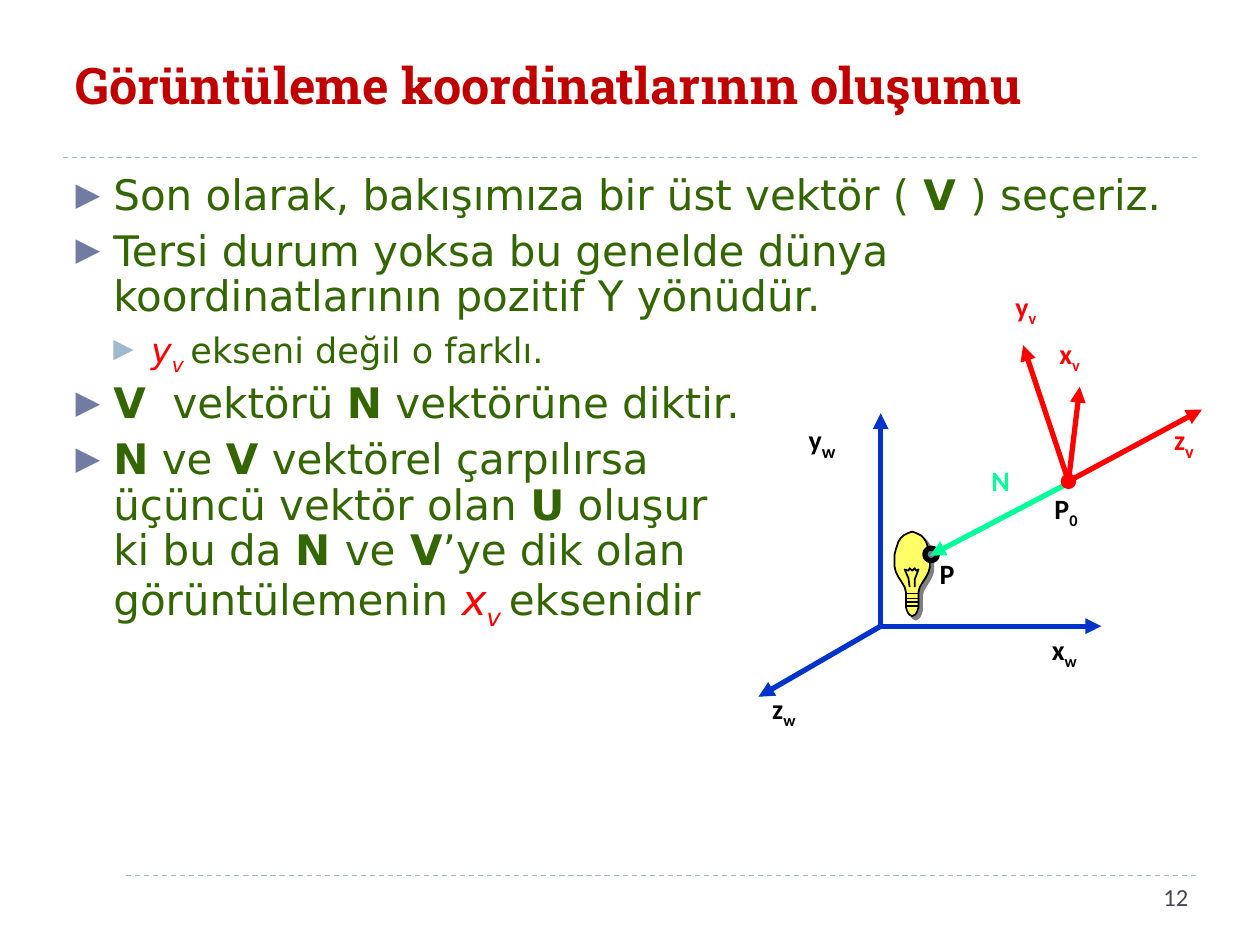
import copy

import pptx
import pptx.dml.color
import pptx.enum.dml
import pptx.enum.shapes
import pptx.enum.text
import pptx.oxml
import pptx.oxml.ns
import pptx.util
from pptx.util import Inches

RGBColor = pptx.dml.color.RGBColor
TITLE_RED = RGBColor(0xC0, 0x00, 0x00)
BODY_GREEN = RGBColor(0x33, 0x66, 0x00)
VIEW_RED = RGBColor(0xFF, 0x00, 0x00)
WORLD_BLUE = RGBColor(0x00, 0x33, 0xCC)
NORMAL_GREEN = RGBColor(0x00, 0xFF, 0x99)
BULB_YELLOW = RGBColor(0xFF, 0xFF, 0x66)
POINT_FILL = RGBColor(0x72, 0x7C, 0xA3)
RULE_BLUE = RGBColor(0x9F, 0xB8, 0xCD)
NUMBER_GRAY = RGBColor(0x46, 0x46, 0x53)
BLACK = RGBColor(0x00, 0x00, 0x00)

TITLE = "Görüntüleme koordinatlarının oluşumu"
TITLE_FORMAT = {"name": "Roboto Slab", "size": 28.8, "bold": True, "color": TITLE_RED}
NUMBER_FORMAT = {"name": "Calibri", "size": 14, "color": NUMBER_GRAY}
LABEL_FORMAT = {"name": "Calibri", "size": 16, "bold": True}

PLAIN = {"color": BODY_GREEN}
BOLD = {"color": BODY_GREEN, "bold": True}
AXIS = {"color": VIEW_RED, "italic": True}
SUB = {**AXIS, "subscript": True}

# (level, runs); a newline inside a run is a line break
BULLETS = [
    (0, [("Son olarak, bakışımıza bir üst vektör ( ", PLAIN), ("V ", BOLD), (") seçeriz.", PLAIN)]),
    (0, [("Tersi durum yoksa bu genelde dünya koordinatlarının pozitif Y yönüdür.", PLAIN)]),
    (1, [("y", AXIS), ("v ", SUB), ("ekseni değil o farklı.", PLAIN)]),
    (0, [("V", BOLD), ("  vektörü ", PLAIN), ("N", BOLD), (" vektörüne diktir.", PLAIN)]),
    (0, [("N", BOLD), (" ve ", PLAIN), ("V", BOLD),
         (" vektörel çarpılırsa \nüçüncü vektör olan ", PLAIN), ("U", BOLD),
         (" oluşur \nki bu da ", PLAIN), ("N ", BOLD), ("ve", PLAIN), (" V", BOLD),
         ("’ye dik olan \ngörüntülemenin ", PLAIN), ("x", AXIS), ("v ", SUB),
         ("eksenidir", PLAIN)]),
]
# size, space before, bullet colour of each level
LEVELS = [(24, 6, POINT_FILL), (20, 5, RULE_BLUE)]

RULES = [((0.5, 1.25), (9.5, 1.25)), ((1, 6.95), (9.5, 6.95))]

WORLD_ORIGIN = (6.99, 4.97)
VIEW_ORIGIN = (8.48, 3.82)
WORLD_AXES = [(6.99, 3.28), (8.74, 4.97), (6.02, 5.53)]
VIEW_AXES = [(8.12, 2.74), (8.57, 3.07), (9.54, 3.25)]
NORMAL = ((8.45, 3.85), (7.38, 4.41))

# letter, subscript, subscript size, colour, (left, top, width, height)
LABELS = [
    ("x", "w", 16, BLACK, (8.25, 4.97, 0.58, 0.44)),
    ("z", "w", 16, BLACK, (6.03, 5.44, 0.68, 0.44)),
    ("y", "w", 18, BLACK, (6.32, 3.28, 0.68, 0.48)),
    ("z", "v", 18, VIEW_RED, (9.22, 3.28, 0.44, 0.4)),
    ("P", "0", 16, BLACK, (8.27, 3.85, 1.13, 0.37)),
    ("P", "", 16, BLACK, (7.36, 4.37, 0.48, 0.44)),
    ("N", "", 16, NORMAL_GREEN, (7.77, 3.63, 0.58, 0.44)),
    ("x", "v", 16, VIEW_RED, (8.31, 2.62, 0.77, 0.44)),
    ("y", "v", 16, VIEW_RED, (7.96, 2.25, 0.68, 0.44)),
]

BULB_AXIS = 7.24
# right half of the bulb from top to bottom, mirrored about BULB_AXIS
BULB_HALF = [
    (7.24, 4.22), (7.27, 4.23), (7.29, 4.24), (7.31, 4.25), (7.33, 4.27), (7.35, 4.3),
    (7.36, 4.33), (7.37, 4.36), (7.38, 4.4), (7.38, 4.46), (7.38, 4.5), (7.37, 4.54),
    (7.35, 4.58), (7.33, 4.61), (7.3, 4.66), (7.29, 4.7), (7.29, 4.82), (7.28, 4.85),
    (7.27, 4.87), (7.26, 4.88), (7.24, 4.89),
]
FILAMENT = [
    [(7.22, 4.66), (7.21, 4.59), (7.18, 4.52), (7.21, 4.53), (7.22, 4.51), (7.24, 4.53),
     (7.26, 4.51), (7.27, 4.53), (7.29, 4.52), (7.26, 4.6), (7.26, 4.66)],
    [(7.19, 4.71), (7.29, 4.71), (7.29, 4.75), (7.19, 4.75), (7.19, 4.78), (7.29, 4.78),
     (7.29, 4.81), (7.19, 4.81)],
]


def add_xml(parent, xml):
    tag, rest = xml.split(" ", 1) if " " in xml else (xml, "/>")
    parent.append(pptx.oxml.parse_xml(f"{tag} {pptx.oxml.ns.nsdecls('a')} {rest}"))


def add_run(paragraph, text, format_values):
    run = paragraph.add_run()
    run.text = text
    for key, value in format_values.items():
        if key == "color":
            run.font.color.rgb = value
        elif key == "subscript":
            run._r.get_or_add_rPr().set("baseline", "-25000")
        else:
            setattr(run.font, key, pptx.util.Pt(value) if key == "size" else value)
    return run


def add_bullet(paragraph, level, runs):
    size, before, bullet_color = LEVELS[level]
    values = {"level": level, "line_spacing": 0.9, "space_before": pptx.util.Pt(before),
              "space_after": pptx.util.Pt(0)}
    for key, value in values.items():
        setattr(paragraph, key, value)
    properties = paragraph._p.get_or_add_pPr()
    properties.set("marL", str(Inches(0.3 * (level + 1))))
    properties.set("indent", str(Inches(-0.3)))
    for xml in (f'<a:buClr ><a:srgbClr val="{bullet_color}"/></a:buClr>',
                '<a:buSzPct val="76000"/>',
                '<a:buFont typeface="DejaVu Sans"/>',
                '<a:buChar char="▶"/>'):
        add_xml(properties, xml)
    for text, style in runs:
        for index, line in enumerate(text.split("\n")):
            if index:
                paragraph.add_line_break()
                paragraph._p[-1].append(copy.deepcopy(run._r.rPr))
            run = add_run(paragraph, line, {"name": "DejaVu Sans", "size": size, **style})


def add_line(shapes, start, end, color, width=3, head=None, tail=None, dash=None):
    line = shapes.add_connector(pptx.enum.shapes.MSO_CONNECTOR.STRAIGHT,
                                *map(Inches, (*start, *end)))
    line.line.color.rgb = color
    line.line.width = pptx.util.Pt(width)
    if dash:
        line.line.dash_style = dash
    for tag, kind in (("headEnd", head), ("tailEnd", tail)):
        if kind:
            add_xml(line.line._get_or_add_ln(), f'<a:{tag} type="{kind}"/>')
    add_xml(line._element.spPr, "<a:effectLst />")


def add_text_box(shapes, box):
    frame = shapes.add_textbox(*map(Inches, box)).text_frame
    frame.word_wrap = True
    return frame.paragraphs[0]


def add_outline(shapes, contours, close):
    builder = None
    for contour in contours:
        first, *others = [tuple(map(Inches, point)) for point in contour]
        if builder is None:
            builder = shapes.build_freeform(*first, scale=1.0)
        else:
            builder.move_to(*first)
        builder.add_line_segments(others, close=close)
    outline = builder.convert_to_shape()
    outline.shadow.inherit = False
    outline.line.color.rgb = BLACK
    outline.line.width = pptx.util.Pt(1)
    return outline


def add_bulb(shapes):
    mirrored = [(2 * BULB_AXIS - x, y) for x, y in BULB_HALF[-2:0:-1]]
    glass = add_outline(shapes, [BULB_HALF + mirrored], True)
    glass.fill.solid()
    glass.fill.fore_color.rgb = BULB_YELLOW
    effects = glass._element.spPr.find(pptx.oxml.ns.qn("a:effectLst"))
    add_xml(effects, f'<a:outerShdw dist="{pptx.util.Pt(2.8)}" dir="2700000" algn="ctr" '
                     'rotWithShape="0"><a:srgbClr val="808080"/></a:outerShdw>')
    add_outline(shapes, FILAMENT, False).fill.background()


def place(placeholder, box, anchor):
    for key, value in zip(("left", "top", "width", "height"), box):
        setattr(placeholder, key, Inches(value))
    frame = placeholder.text_frame
    frame.auto_size = pptx.enum.text.MSO_AUTO_SIZE.NONE
    frame.vertical_anchor = anchor
    return frame


def main():
    deck = pptx.Presentation()
    deck.slide_width, deck.slide_height = Inches(10), Inches(7.5)
    slide = deck.slides.add_slide(deck.slide_layouts[1])
    shapes = slide.shapes
    anchors = pptx.enum.text.MSO_ANCHOR

    for start, end in RULES:
        add_line(shapes, start, end, RULE_BLUE, 0.75, dash=pptx.enum.dml.MSO_LINE.DASH)

    heading = place(shapes.title, (0.5, 0.13, 9, 1.08), anchors.MIDDLE).paragraphs[0]
    heading.alignment = pptx.enum.text.PP_ALIGN.LEFT
    add_run(heading, TITLE, TITLE_FORMAT)

    body = place(slide.placeholders[1], (0.5, 1.33, 9, 5.4), anchors.TOP)
    for index, (level, runs) in enumerate(BULLETS):
        add_bullet(body.add_paragraph() if index else body.paragraphs[0], level, runs)

    number = add_text_box(shapes, (7.2, 6.95, 2.33, 0.4))
    number.alignment = pptx.enum.text.PP_ALIGN.RIGHT
    add_run(number, "12", NUMBER_FORMAT)

    for end in WORLD_AXES:
        add_line(shapes, WORLD_ORIGIN, end, WORLD_BLUE, tail="triangle")
    add_bulb(shapes)

    point = shapes.add_shape(pptx.enum.shapes.MSO_SHAPE.OVAL,
                             *map(Inches, (7.34, 4.35, 0.1, 0.1)))
    point.shadow.inherit = False
    point.fill.solid()
    point.fill.fore_color.rgb = POINT_FILL
    point.line.color.rgb = BLACK
    point.line.width = pptx.util.Pt(3)

    add_line(shapes, *NORMAL, NORMAL_GREEN, tail="triangle")
    for letter, subscript, subscript_size, color, box in LABELS:
        label = add_text_box(shapes, box)
        style = {**LABEL_FORMAT, "color": color}
        add_run(label, letter, style)
        if subscript:
            add_run(label, subscript, {**style, "size": subscript_size, "subscript": True})
    for end in VIEW_AXES:
        add_line(shapes, VIEW_ORIGIN, end, VIEW_RED, tail="triangle",
                 head="oval" if end == VIEW_AXES[-1] else None)

    deck.save("out.pptx")


if __name__ == "__main__":
    main()
